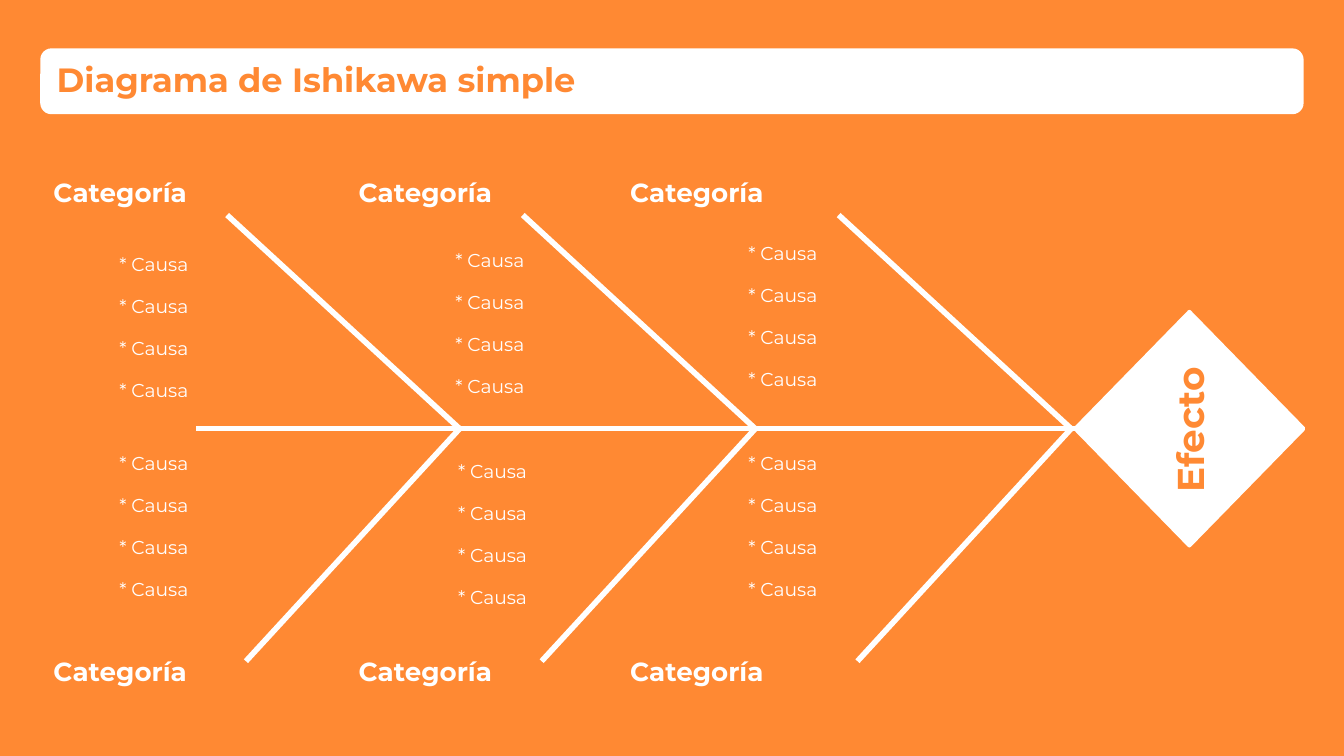
from pptx import Presentation
from pptx.dml.color import RGBColor
from pptx.enum.shapes import MSO_CONNECTOR, MSO_SHAPE
from pptx.enum.text import MSO_ANCHOR, MSO_AUTO_SIZE, PP_ALIGN
from pptx.oxml.ns import qn
from pptx.util import Inches, Pt

STRAIGHT = MSO_CONNECTOR.STRAIGHT
DIAMOND = MSO_SHAPE.DIAMOND
ROUNDED = MSO_SHAPE.ROUNDED_RECTANGLE
MIDDLE = MSO_ANCHOR.MIDDLE
FIT_SHAPE = MSO_AUTO_SIZE.SHAPE_TO_FIT_TEXT
NO_FIT = MSO_AUTO_SIZE.NONE
CENTER = PP_ALIGN.CENTER
LEFT = PP_ALIGN.LEFT

ORANGE = "FF8933"
WHITE = "FFFFFF"
COLUMNS = 100
ROWS = 56.25
CELL = 0.1

TITLE_FONT = {"name": "Montserrat", "size": Pt(18), "bold": True}
EFFECT_FONT = {"name": "Montserrat", "size": Pt(20), "bold": True}
CATEGORY_FONT = {"name": "Montserrat", "size": Pt(14), "bold": True}
CAUSE_FONT = {"name": "Montserrat", "size": Pt(10), "bold": False}

SPINE_START = 14.6
SPINE_ROW = 31.9
CAUSE_COUNT = 4
CAUSE_STEP = 3.13
LABEL_WIDTH = 13.4
JOINTS = (34.2, 56.2, 79.7)
CATEGORY_COLUMNS = (3, 25.7, 45.9)
HALVES = (
    {"tip_row": 16, "reach": 17.3, "category_row": 12.6,
     "causes": ((7.9, 18.3), (32.9, 18), (54.7, 17.5))},
    {"tip_row": 49.2, "reach": 15.9, "category_row": 48.3,
     "causes": ((7.9, 33.1), (33.1, 33.7), (54.7, 33.1))},
)


def grid(*cells):
    return [Inches(cell * CELL) for cell in cells]


def color(hex_value):
    return RGBColor.from_string(hex_value)


def apply_format(target, values):
    for name, value in values.items():
        setattr(target, name, value)


def write_text(shape, text, font, hex_color, alignment=LEFT):
    paragraph = shape.text_frame.paragraphs[0]
    paragraph.alignment = alignment
    run = paragraph.add_run()
    run.text = text
    apply_format(run.font, font)
    run.font.color.rgb = color(hex_color)
    return paragraph


def add_label(slide, text, box, font, hex_color=WHITE, alignment=LEFT, **frame_format):
    shape = slide.shapes.add_textbox(*grid(*box))
    apply_format(shape.text_frame, {"word_wrap": True, "auto_size": FIT_SHAPE, **frame_format})
    write_text(shape, text, font, hex_color, alignment)
    return shape


def add_white_shape(slide, kind, box):
    shape = slide.shapes.add_shape(kind, *grid(*box))
    shape.shadow.inherit = False
    shape.fill.solid()
    shape.fill.fore_color.rgb = color(WHITE)
    return shape


def add_line(slide, start, end):
    line = slide.shapes.add_connector(STRAIGHT, *grid(*start, *end))
    line.line.color.rgb = color(WHITE)
    line.line.width = Pt(3)
    properties = line._element.spPr
    properties.append(properties.makeelement(qn("a:effectLst"), {}))
    return line


def add_title(slide):
    banner = add_white_shape(slide, ROUNDED, (3, 3.6, 94, 4.9))
    banner.line.fill.background()
    banner.adjustments[0] = 0.17
    margins = dict.fromkeys(("margin_left", "margin_right", "margin_top", "margin_bottom"), Inches(0.1))
    apply_format(banner.text_frame, {"vertical_anchor": MIDDLE, "word_wrap": True, **margins})
    paragraph = write_text(banner, "Diagrama de Ishikawa simple", TITLE_FONT, ORANGE)
    paragraph.line_spacing = 0.9


def add_effect(slide):
    diamond = add_white_shape(slide, DIAMOND, (80, SPINE_ROW - 8.7, 17, 17.4))
    diamond.line.color.rgb = color(WHITE)
    diamond.line.width = Pt(2)
    spine = add_line(slide, (SPINE_START, SPINE_ROW), (80, SPINE_ROW))
    spine.end_connect(diamond, 1)
    label = add_label(slide, "Efecto", (82, 30.3, 13, 3.4), EFFECT_FONT, ORANGE, CENTER,
                      vertical_anchor=MIDDLE, auto_size=NO_FIT)
    label.rotation = 270


def add_half(slide, half):
    for joint, category_column, (cause_column, cause_row) in zip(
            JOINTS, CATEGORY_COLUMNS, half["causes"]):
        add_line(slide, (joint - half["reach"], half["tip_row"]), (joint, SPINE_ROW))
        add_label(slide, "Categoría", (category_column, half["category_row"], LABEL_WIDTH, 3.4),
                  CATEGORY_FONT)
        for index in range(CAUSE_COUNT):
            row = cause_row + index * CAUSE_STEP
            add_label(slide, "* Causa", (cause_column, row, LABEL_WIDTH, 2.7), CAUSE_FONT)


def main():
    presentation = Presentation()
    presentation.slide_width, presentation.slide_height = grid(COLUMNS, ROWS)
    slide = presentation.slides.add_slide(presentation.slide_layouts[6])
    slide.background.fill.solid()
    slide.background.fill.fore_color.rgb = color(ORANGE)
    add_effect(slide)
    for half in HALVES:
        add_half(slide, half)
    add_title(slide)
    presentation.save("out.pptx")


if __name__ == "__main__":
    main()
